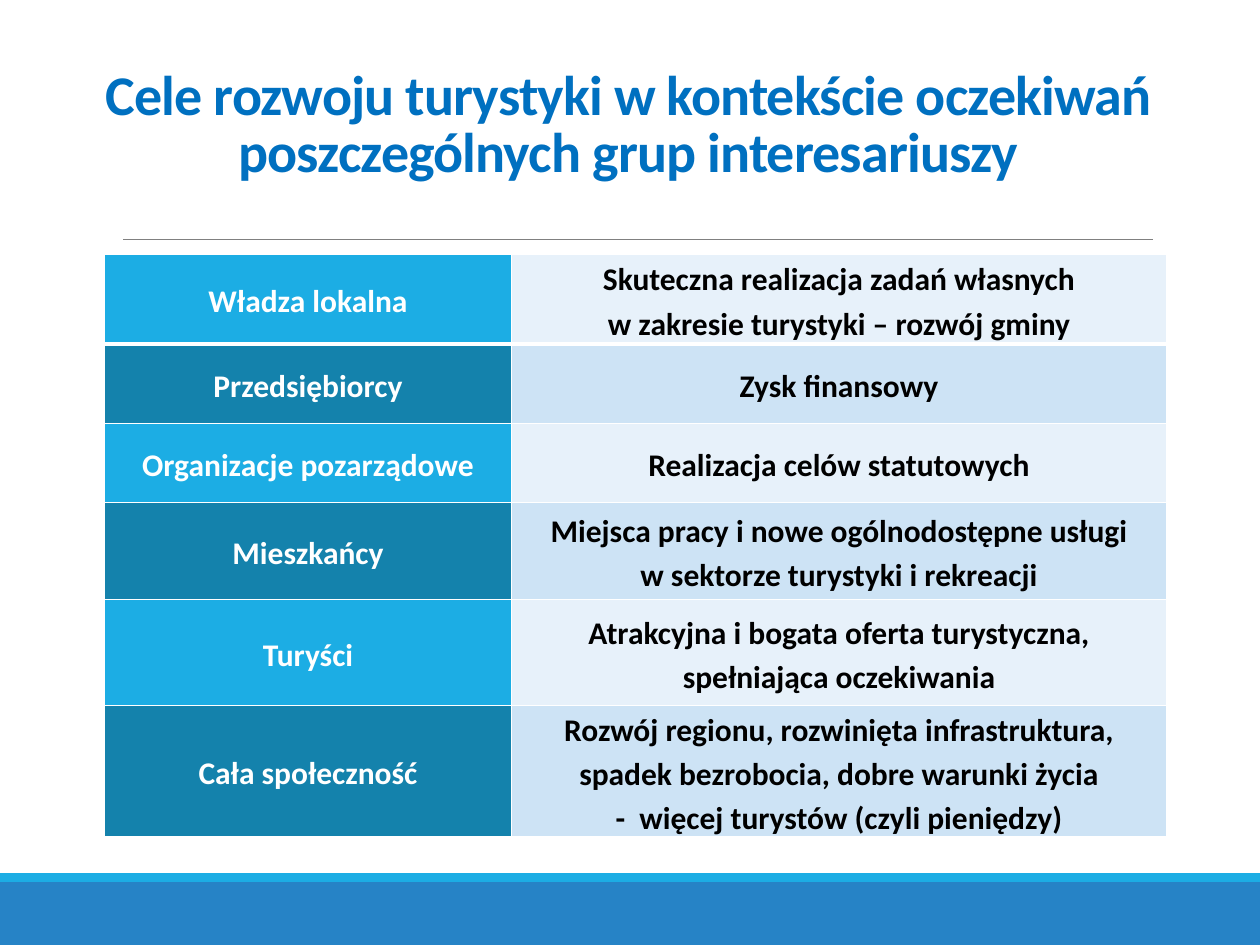
from dataclasses import dataclass

from lxml import etree
from pptx import Presentation
from pptx import util as u
from pptx.dml.color import RGBColor
from pptx.enum import shapes, text
from pptx.oxml import ns


@dataclass(frozen=True)
class Theme:
    font: str = "Calibri"
    title_size: int = 32
    cell_size: int = 18
    title: str = "0070C0"
    band: str = "2683C6"
    accent: str = "1CADE4"
    accent_dark: str = "1482AC"
    pale: str = "E7F1FA"
    pale_dark: str = "CDE3F5"
    rule: str = "808080"
    white: str = "FFFFFF"
    black: str = "000000"


theme = Theme()


def write(tf, content, *, size, color, line_spacing, space=0, tracking=None):
    """Write one centred bold paragraph; line feeds become line breaks."""
    tf.word_wrap = True
    p = tf.paragraphs[0]
    p.text = content
    p.alignment = text.PP_ALIGN.CENTER
    p.line_spacing = line_spacing
    p.space_before = p.space_after = u.Pt(space)
    for r in p.runs:
        r.font.name = theme.font
        r.font.size = u.Pt(size)
        r.font.bold = True
        r.font.color.rgb = RGBColor.from_string(color)
        if tracking is not None:
            r.font._element.set("spc", str(int(tracking * 100)))


def set_borders(cell, widths):
    """Draw white cell borders; widths are points by side."""
    tcPr = cell._tc.get_or_add_tcPr()
    for i, (side, width) in enumerate(widths.items()):
        ln = etree.Element(ns.qn(f"a:ln{side}"), w=str(u.Pt(width)))
        fill = etree.SubElement(ln, ns.qn("a:solidFill"))
        etree.SubElement(fill, ns.qn("a:srgbClr"), val=theme.white)
        tcPr.insert(i, ln)


prs = Presentation()
prs.slide_width, prs.slide_height = u.Inches(10), u.Inches(7.5)
s = prs.slides.add_slide(prs.slide_layouts[6])

# Footer bands
for top, height, color in [(7, 0.5, theme.band), (6.93, 0.07, theme.accent)]:
    sp = s.shapes.add_shape(shapes.MSO_SHAPE.RECTANGLE, 0, u.Inches(top),
                            prs.slide_width, u.Inches(height))
    sp.shadow.inherit = False
    sp.fill.solid()
    sp.fill.fore_color.rgb = RGBColor.from_string(color)
    sp.line.fill.background()

# Rule under the title
rule = s.shapes.add_connector(shapes.MSO_CONNECTOR.STRAIGHT, u.Inches(0.98),
                              u.Inches(1.9), u.Inches(9.15), u.Inches(1.9))
rule.line.color.rgb = RGBColor.from_string(theme.rule)
rule.line.width = u.Pt(0.5)
etree.SubElement(rule._element.spPr, ns.qn("a:effectLst"))

# Title
sp = s.shapes.add_textbox(u.Inches(0.72), u.Inches(0.31), u.Inches(8.53), u.Inches(1.39))
sp.text_frame.vertical_anchor = text.MSO_ANCHOR.MIDDLE
write(sp.text_frame,
      "Cele rozwoju turystyki w kontekście oczekiwań poszczególnych grup interesariuszy",
      size=theme.title_size, color=theme.title, line_spacing=0.85, tracking=-0.5)

# Stakeholder table: row height, group, goal
rows = [
    (0.71, "Władza lokalna",
     "Skuteczna realizacja zadań własnych\nw zakresie turystyki – rozwój gminy"),
    (0.63, "Przedsiębiorcy", "Zysk finansowy"),
    (0.63, "Organizacje pozarządowe", "Realizacja celów statutowych"),
    (0.77, "Mieszkańcy",
     "Miejsca pracy i nowe ogólnodostępne usługi\nw sektorze turystyki i rekreacji"),
    (0.84, "Turyści", "Atrakcyjna i bogata oferta turystyczna, spełniająca oczekiwania"),
    (1.04, "Cała społeczność",
     "Rozwój regionu, rozwinięta infrastruktura, spadek bezrobocia, dobre warunki życia\n"
     "-  więcej turystów (czyli pieniędzy)"),
]
fills = [(theme.accent, theme.pale), (theme.accent_dark, theme.pale_dark)]
table = s.shapes.add_table(len(rows), 2, u.Inches(0.83), u.Inches(2.02),
                           u.Inches(8.43), u.Inches(4.62)).table
table.columns[0].width = u.Inches(3.23)
table.columns[1].width = u.Inches(5.2)

for i, (height, *contents) in enumerate(rows):
    table.rows[i].height = u.Inches(height)
    borders = {"L": 1, "R": 1, "T": 3 if i == 1 else 1, "B": 3 if i == 0 else 1}
    for j, content in enumerate(contents):
        cell = table.cell(i, j)
        cell.fill.solid()
        cell.fill.fore_color.rgb = RGBColor.from_string(fills[i % 2][j])
        cell.vertical_anchor = text.MSO_ANCHOR.MIDDLE
        cell.margin_left = cell.margin_right = u.Inches(0.07)
        cell.margin_top = cell.margin_bottom = 0
        write(cell.text_frame, content, size=theme.cell_size,
              color=(theme.white, theme.black)[j], line_spacing=1.15, space=6)
        set_borders(cell, borders)

prs.save("out.pptx")
